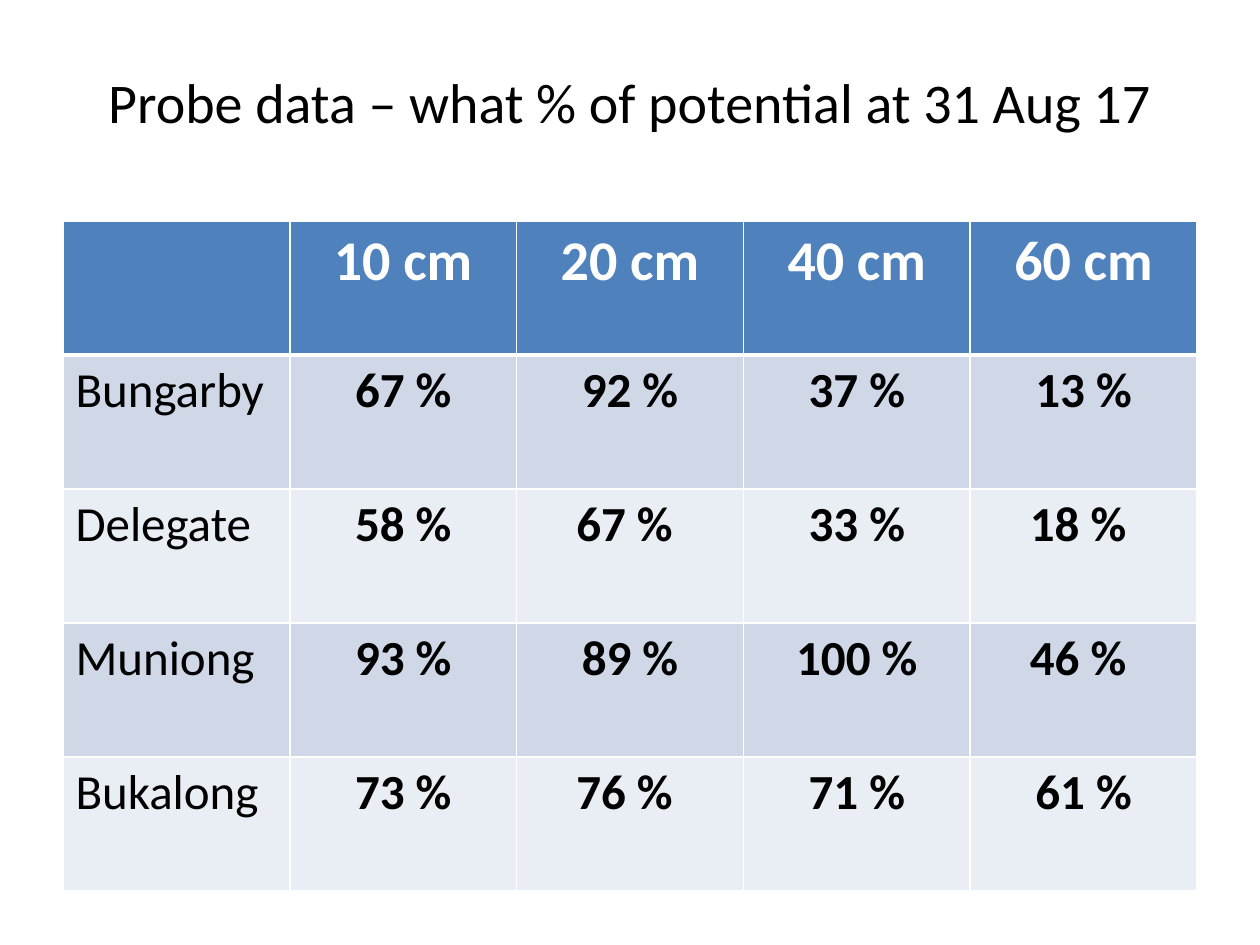
"""Build a slide with a table of soil probe readings by site and depth."""
from lxml.etree import SubElement
from pptx import Presentation
from pptx.dml.color import RGBColor
from pptx.enum.text import MSO_ANCHOR as Anchor, MSO_AUTO_SIZE as AutoSize, PP_ALIGN as Align
from pptx.oxml.ns import qn
from pptx.util import Pt

TITLE = "Probe data – what % of potential at 31 Aug 17"
ROWS = [
    ["", "10 cm", "20 cm", "40 cm", "60 cm"],
    ["Bungarby", "67 %", "92 %", "37 %", "13 %"],
    ["Delegate", "58 %", "67 % ", "33 %", "18 % "],
    ["Muniong", "93 %", "89 %", "100 %", "46 % "],
    ["Bukalong", "73 %", "76 % ", "71 %", "61 %"],
]
HEADER_FILL, BAND_FILLS = "4F81BD", ("D0D8E8", "E9EDF4")
BLACK, WHITE = "000000", "FFFFFF"
LEFT, WIDTH = 63, 1134
TITLE_TOP, TITLE_HEIGHT = 38, 127
TABLE_TOP, ROW_HEIGHT = 221, 134


def px(length):
    return round(length * 914400 / 126)


def color(value):
    return RGBColor.from_string(value)


def write(text_frame, text, size, fill=BLACK, bold=False, align=Align.CENTER):
    paragraph = text_frame.paragraphs[0]
    paragraph.alignment = align
    paragraph.font.size = Pt(size)
    if text:
        run = paragraph.add_run()
        run.text = text
        font = run.font
        font.name, font.size, font.bold = "Calibri", Pt(size), bold
        font.color.rgb = color(fill)


def add_borders(cell, **widths):
    properties = cell._tc.get_or_add_tcPr()
    for side in "LRTB":
        line = SubElement(properties, qn(f"a:ln{side}"), w=str(Pt(widths.get(side, 1))))
        fill = SubElement(line, qn("a:solidFill"))
        SubElement(fill, qn("a:srgbClr"), val=WHITE)


def add_title(slide):
    title = slide.shapes.title
    title.left, title.top = px(LEFT), px(TITLE_TOP)
    title.width, title.height = px(WIDTH), px(TITLE_HEIGHT)
    title.text_frame.auto_size = AutoSize.NONE
    title.text_frame.vertical_anchor = Anchor.MIDDLE
    write(title.text_frame, TITLE, 32)


def add_probe_table(slide):
    frame = slide.shapes.add_table(
        len(ROWS), len(ROWS[0]), px(LEFT), px(TABLE_TOP), px(WIDTH), px(ROW_HEIGHT * len(ROWS)))
    table = frame.table
    for row_index, values in enumerate(ROWS):
        table.rows[row_index].height = px(ROW_HEIGHT)
        header = row_index == 0
        for column_index, value in enumerate(values):
            cell = table.cell(row_index, column_index)
            site = column_index == 0 and not header
            add_borders(cell, T=3 if row_index == 1 else 1, B=3 if header else 1)
            cell.fill.solid()
            cell.fill.fore_color.rgb = color(
                HEADER_FILL if header else BAND_FILLS[(row_index - 1) % 2])
            write(cell.text_frame, value, 32 if header else 28,
                  fill=WHITE if header else BLACK, bold=not site,
                  align=Align.LEFT if site else Align.CENTER)


def main():
    presentation = Presentation()
    presentation.slide_width, presentation.slide_height = px(1260), px(945)
    slide = presentation.slides.add_slide(presentation.slide_layouts[5])
    add_title(slide)
    add_probe_table(slide)
    presentation.save("out.pptx")


if __name__ == "__main__":
    main()
